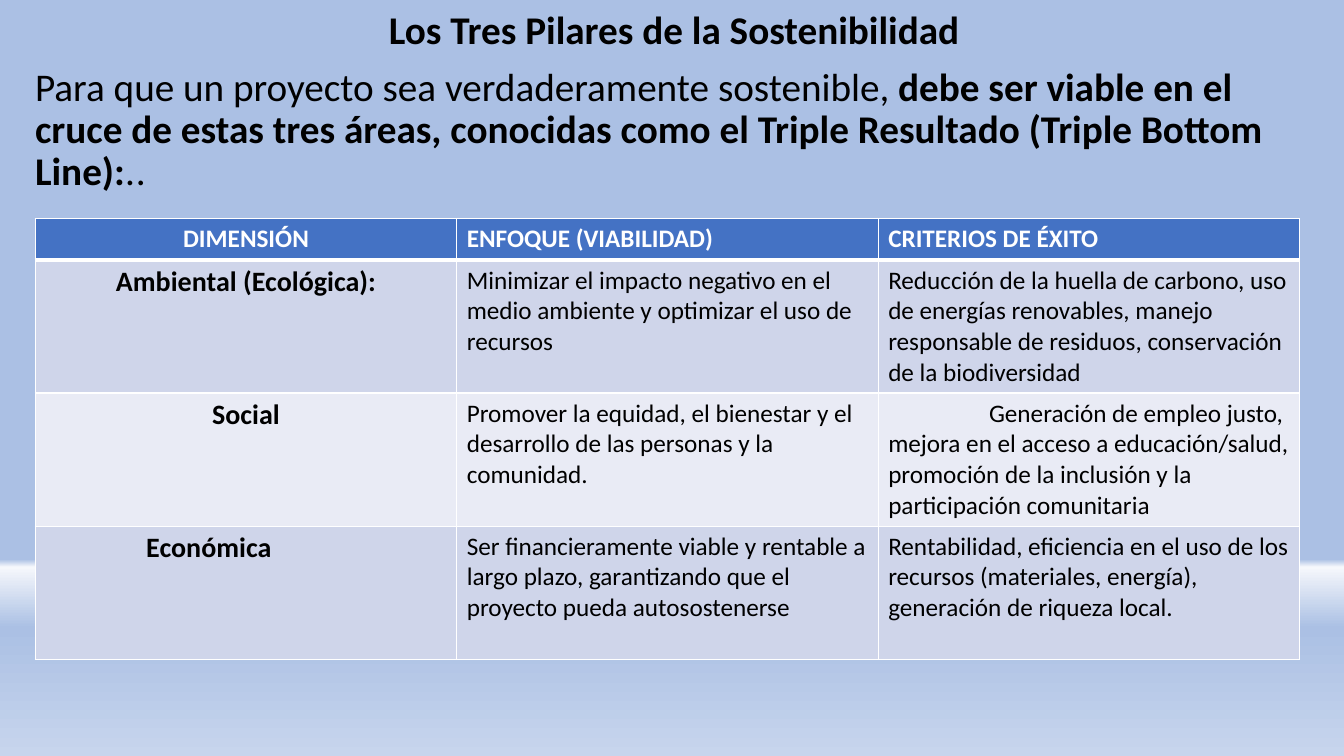
"""Builds the slide on the three pillars of sustainability."""
from lxml import etree
from pptx import Presentation
from pptx.dml.color import RGBColor
from pptx.enum.text import PP_ALIGN
from pptx.oxml import parse_xml
from pptx.oxml.ns import qn
from pptx.util import Inches, Pt

CENTER = PP_ALIGN.CENTER
LEFT = PP_ALIGN.LEFT
FONT = "Calibri"
NAMESPACE = "http://schemas.openxmlformats.org/drawingml/2006/main"
COLORS = {
    "sky": "ABC0E4", "horizon": "F6F8FC", "ground": "C7D5ED",
    "header": "4472C4", "band_dark": "CFD5EA", "band_light": "E9EBF5",
    "text": "000000", "white": "FFFFFF",
}
GRADIENT = [(74, "sky"), (75, "horizon"), (83, "sky"), (100, "ground")]
INTRO = [
    ("Para que un proyecto sea verdaderamente sostenible, ", False),
    ("debe ser viable en el cruce de estas tres áreas, conocidas como el "
     "Triple Resultado (Triple Bottom Line):", True),
    (".\t.", False),
]
ROWS = [
    ("DIMENSIÓN", "ENFOQUE (VIABILIDAD)", "CRITERIOS DE ÉXITO"),
    ("Ambiental (Ecológica):",
     "Minimizar el impacto negativo en el medio ambiente y optimizar el uso de recursos",
     "Reducción de la huella de carbono, uso de energías renovables, manejo "
     "responsable de residuos, conservación de la biodiversidad"),
    ("Social",
     "Promover la equidad, el bienestar y el desarrollo de las personas y la comunidad.",
     "Generación de empleo justo, mejora en el acceso a educación/salud, "
     "promoción de la inclusión y la participación comunitaria"),
    ("Económica",
     "Ser financieramente viable y rentable a largo plazo, garantizando que el "
     "proyecto pueda autosostenerse",
     "Rentabilidad, eficiencia en el uso de los recursos (materiales, energía), "
     "generación de riqueza local."),
]
INDENTED_CELLS = [(2, 2), (3, 0)]


def style_font(font, size, bold, color):
    font.name = FONT
    font.size = Pt(size)
    font.bold = bold
    font.color.rgb = RGBColor.from_string(COLORS[color])


def add_borders(cell, bottom_width):
    widths = {"lnL": 1, "lnR": 1, "lnT": 1, "lnB": bottom_width}
    for position, (tag, width) in enumerate(widths.items()):
        border = parse_xml(
            f'<a:{tag} xmlns:a="{NAMESPACE}" w="{Pt(width)}"><a:solidFill>'
            f'<a:srgbClr val="{COLORS["white"]}"/></a:solidFill></a:{tag}>')
        cell._tc.get_or_add_tcPr().insert(position, border)


deck = Presentation()
deck.slide_width = Inches(13.33)
deck.slide_height = Inches(7.5)
page = deck.slides.add_slide(deck.slide_layouts[6])

background = page.background.fill
background.gradient()
background.gradient_angle = 270
stop_list = page.background._cSld.find(".//" + qn("a:gsLst"))
for stop in list(stop_list):
    stop_list.remove(stop)
for percent, color in GRADIENT:
    stop = etree.SubElement(stop_list, qn("a:gs"), pos=str(percent * 1000))
    etree.SubElement(stop, qn("a:srgbClr"), val=COLORS[color])

box = page.shapes.add_textbox(Inches(0.25), Inches(0.06), Inches(12.87), Inches(2))
frame = box.text_frame
frame.word_wrap = True
title = frame.paragraphs[0]
title.text = "Los Tres Pilares de la Sostenibilidad"
title.alignment = CENTER
title.line_spacing = 0.9
style_font(title.runs[0].font, 28, True, "text")
intro = frame.add_paragraph()
intro.line_spacing = 0.9
intro.space_before = Pt(10)
for words, bold in INTRO:
    span = intro.add_run()
    span.text = words
    style_font(span.font, 28, bold, "text")

table = page.shapes.add_table(
    len(ROWS), 3, Inches(0.35), Inches(2.17), Inches(12.53), Inches(4.37)).table
for column in table.columns:
    column.width = Inches(4.18)
for row_index, texts in enumerate(ROWS):
    is_header = row_index == 0
    table.rows[row_index].height = Inches(0.41 if is_header else 1.32)
    band = "header" if is_header else "band_dark" if row_index % 2 else "band_light"
    for column_index, words in enumerate(texts):
        cell = table.cell(row_index, column_index)
        cell.fill.solid()
        cell.fill.fore_color.rgb = RGBColor.from_string(COLORS[band])
        add_borders(cell, 3 if is_header else 1)
        is_name = column_index == 0
        is_indented = (row_index, column_index) in INDENTED_CELLS
        para = cell.text_frame.paragraphs[0]
        para.text = words
        para.alignment = CENTER if is_name and not is_indented else LEFT
        if is_indented:
            para._p.get_or_add_pPr().set("indent", str(Inches(1)))
        style_font(para.runs[0].font, 20 if is_name and not is_header else 18,
                   is_header or is_name, "white" if is_header else "text")

deck.save("out.pptx")
